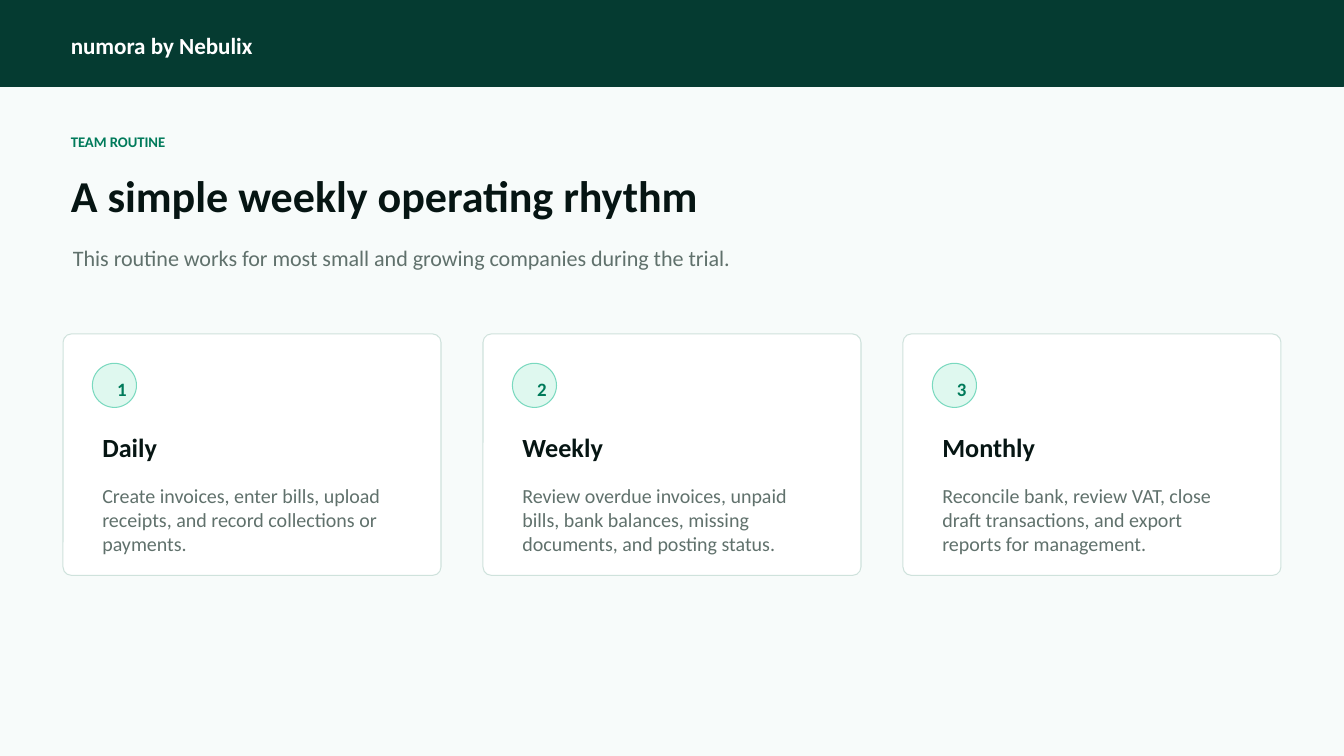
from dataclasses import dataclass

import pptx
import pptx.dml.color
import pptx.enum.shapes
import pptx.enum.text
import pptx.util

COLUMNS = 1280
ROWS = 720
COLORS = {
    "background": "F7FBFA",
    "header": "053B31",
    "white": "FFFFFF",
    "accent": "007A5A",
    "ink": "061513",
    "muted": "60716C",
    "card_line": "CFE2DC",
    "badge": "DFF8EF",
    "badge_line": "79D9BF",
}
MARGIN = 60
CARD_TOP = 318
CARD_WIDTH = 360
CARD_HEIGHT = 230
CARD_GAP = 40
CARD_PADDING = 28
BADGE_SIZE = 42
CARD_TEXT_WIDTH = CARD_WIDTH - 2 * CARD_PADDING


@dataclass(frozen=True)
class Area:
    column: float
    row: float
    width: float
    height: float


@dataclass(frozen=True)
class TextStyle:
    size: float
    color: str
    bold: bool = True


@dataclass(frozen=True)
class Routine:
    heading: str
    description: str


BRAND = TextStyle(16.5, "white")
EYEBROW = TextStyle(10.5, "accent")
TITLE = TextStyle(31.5, "ink")
SUBTITLE = TextStyle(15.75, "muted", False)
NUMBER = TextStyle(13.5, "accent")
HEADING = TextStyle(18.75, "ink")
DESCRIPTION = TextStyle(14.25, "muted", False)

ROUTINES = [
    Routine("Daily", "Create invoices, enter bills, upload receipts, and record collections or payments."),
    Routine("Weekly", "Review overdue invoices, unpaid bills, bank balances, missing documents, and posting status."),
    Routine("Monthly", "Reconcile bank, review VAT, close draft transactions, and export reports for management."),
]

presentation = pptx.Presentation()
presentation.slide_width = pptx.util.Inches(40 / 3)
presentation.slide_height = pptx.util.Inches(7.5)


def color(name: str) -> pptx.dml.color.RGBColor:
    return pptx.dml.color.RGBColor.from_string(COLORS[name])


def place(area: Area) -> tuple[int, int, int, int]:
    column = presentation.slide_width / COLUMNS
    row = presentation.slide_height / ROWS
    return (
        round(area.column * column),
        round(area.row * row),
        round(area.width * column),
        round(area.height * row),
    )


def write(shape: pptx.shapes.base.BaseShape, text: str, style: TextStyle) -> None:
    frame = shape.text_frame
    frame.text = text
    frame.word_wrap = True
    frame.auto_size = pptx.enum.text.MSO_AUTO_SIZE.NONE
    frame.vertical_anchor = pptx.enum.text.MSO_ANCHOR.TOP
    paragraph = frame.paragraphs[0]
    paragraph.alignment = pptx.enum.text.PP_ALIGN.LEFT
    font = paragraph.runs[0].font
    font.name = "Calibri"
    font.size = pptx.util.Pt(style.size)
    font.bold = style.bold
    font.color.rgb = color(style.color)


def add_text(slide: pptx.slide.Slide, area: Area, text: str, style: TextStyle) -> None:
    write(slide.shapes.add_textbox(*place(area)), text, style)


def add_panel(
    slide: pptx.slide.Slide,
    kind: pptx.enum.shapes.MSO_SHAPE,
    area: Area,
    fill: str,
    line: str,
) -> pptx.shapes.autoshape.Shape:
    shape = slide.shapes.add_shape(kind, *place(area))
    shape.shadow.inherit = False
    shape.fill.solid()
    shape.fill.fore_color.rgb = color(fill)
    shape.line.color.rgb = color(line)
    shape.line.width = pptx.util.Pt(0.75)
    return shape


def add_card(slide: pptx.slide.Slide, index: int, routine: Routine) -> None:
    shapes = pptx.enum.shapes.MSO_SHAPE
    left = MARGIN + index * (CARD_WIDTH + CARD_GAP)
    inner = left + CARD_PADDING
    card_area = Area(left, CARD_TOP, CARD_WIDTH, CARD_HEIGHT)
    card = add_panel(slide, shapes.ROUNDED_RECTANGLE, card_area, "white", "card_line")
    card.adjustments[0] = 0.035
    badge_area = Area(inner, CARD_TOP + CARD_PADDING, BADGE_SIZE, BADGE_SIZE)
    add_panel(slide, shapes.OVAL, badge_area, "badge", "badge_line")
    add_text(slide, Area(inner + 14, CARD_TOP + 37, 20, 24), str(index + 1), NUMBER)
    add_text(slide, Area(inner, CARD_TOP + 88, CARD_TEXT_WIDTH, 42), routine.heading, HEADING)
    add_text(slide, Area(inner, CARD_TOP + 138, CARD_TEXT_WIDTH, 70), routine.description, DESCRIPTION)


def main() -> None:
    slide = presentation.slides.add_slide(presentation.slide_layouts[5])
    slide.background.fill.solid()
    slide.background.fill.fore_color.rgb = color("background")

    title = slide.shapes.title
    title.left, title.top, title.width, title.height = place(Area(58, 155.5, 900, 66))
    write(title, "A simple weekly operating rhythm", TITLE)

    header_area = Area(0, 0, COLUMNS, 82)
    add_panel(slide, pptx.enum.shapes.MSO_SHAPE.RECTANGLE, header_area, "header", "header")
    add_text(slide, Area(58, 25, 280, 34), "numora by Nebulix", BRAND)
    add_text(slide, Area(58, 122, 430, 28), "TEAM ROUTINE", EYEBROW)
    subtitle = "This routine works for most small and growing companies during the trial."
    add_text(slide, Area(MARGIN, 228.5, 960, 48), subtitle, SUBTITLE)

    for index, routine in enumerate(ROUTINES):
        add_card(slide, index, routine)

    presentation.save("out.pptx")


if __name__ == "__main__":
    main()
